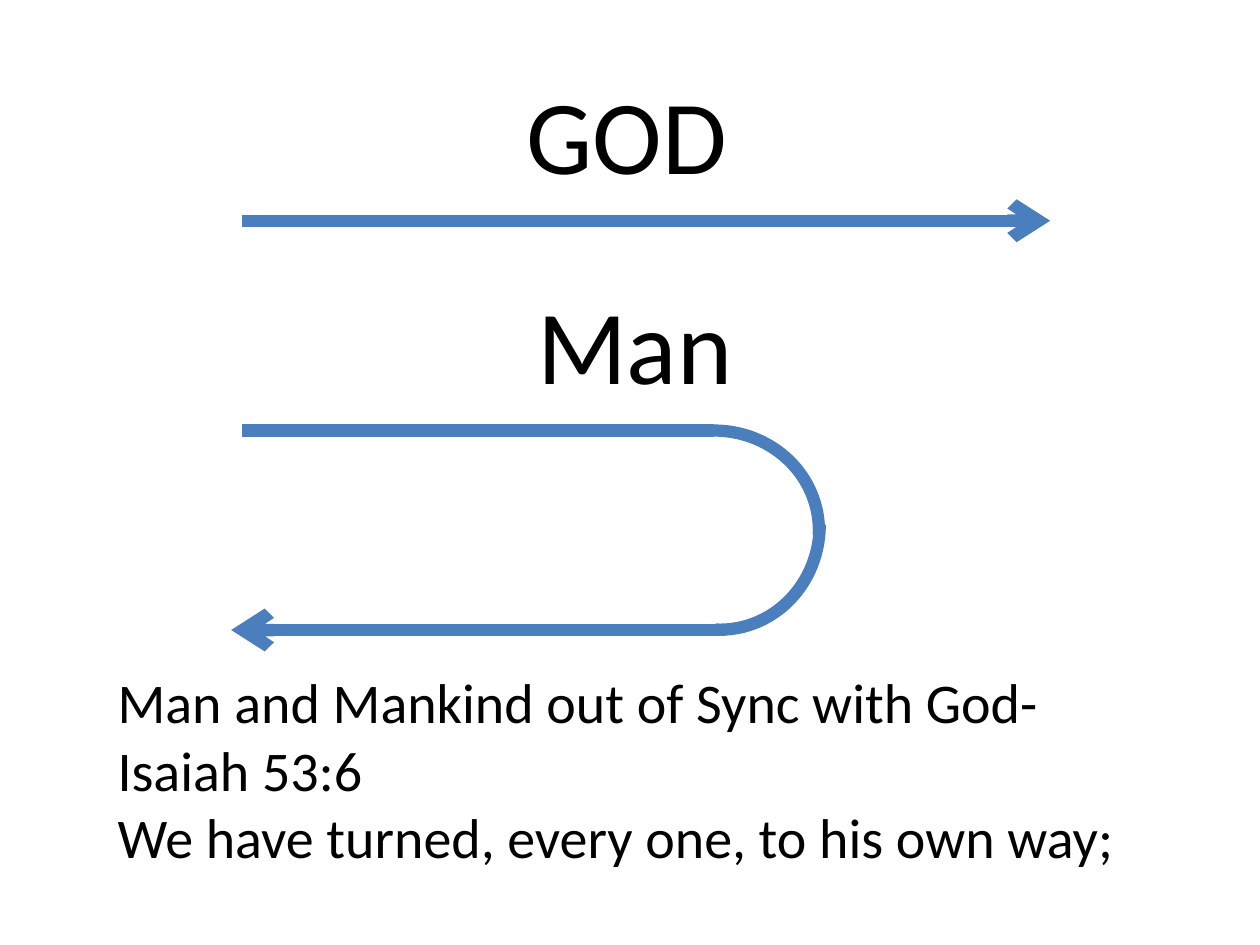
import pptx
import pptx.dml.color
import pptx.enum.shapes
import pptx.enum.text
import pptx.oxml.ns
import pptx.util
from lxml import etree
from pptx.util import Cm


def colour(hex_string):
    return pptx.dml.color.RGBColor.from_string(hex_string)


class SlideBuilder:
    """Holds the style and the current slide."""

    font_name = "Calibri"
    text_colour = "000000"
    line_colour = "4B7EBC"
    line_width = pptx.util.Pt(7)

    def __init__(self, slide):
        self.slide = slide

    def style_line(self, line):
        line.color.rgb = colour(self.line_colour)
        line.width = self.line_width

    def text(self, left, top, width, height, lines, size):
        box = self.slide.shapes.add_textbox(Cm(left), Cm(top), Cm(width), Cm(height))
        frame = box.text_frame
        frame.text = "\n".join(lines)
        frame.word_wrap = False
        frame.auto_size = pptx.enum.text.MSO_AUTO_SIZE.SHAPE_TO_FIT_TEXT
        for paragraph in frame.paragraphs:
            paragraph.font.name = self.font_name
            paragraph.font.size = pptx.util.Pt(size)
            paragraph.font.color.rgb = colour(self.text_colour)

    def horizontal_line(self, shapes, start, end, y, arrow=False):
        connector = shapes.add_connector(
            pptx.enum.shapes.MSO_CONNECTOR.STRAIGHT, Cm(start), Cm(y), Cm(end), Cm(y))
        self.style_line(connector.line)
        properties = connector._element.spPr
        if arrow:
            line = properties.find(pptx.oxml.ns.qn("a:ln"))
            etree.SubElement(line, pptx.oxml.ns.qn("a:tailEnd"), type="arrow")
        etree.SubElement(properties, pptx.oxml.ns.qn("a:effectLst"))

    def quarter_arc(self, shapes, left, top, width, height, rotation=0):
        arc = shapes.add_shape(
            pptx.enum.shapes.MSO_SHAPE.ARC, Cm(left), Cm(top), Cm(width), Cm(height))
        arc.adjustments[0] = 162
        arc.adjustments[1] = 1.407
        arc.rotation = rotation
        arc.shadow.inherit = False
        arc.fill.background()
        self.style_line(arc.line)


def main():
    presentation = pptx.Presentation()
    presentation.slide_width = Cm(25.4)
    presentation.slide_height = Cm(19.05)
    slide = presentation.slides.add_slide(presentation.slide_layouts[6])
    builder = SlideBuilder(slide)
    line_start = 4.87

    # God's straight way
    builder.horizontal_line(slide.shapes, line_start, 21.17, 4.45, arrow=True)
    builder.text(10.37, 1.27, 4.6, 2.82, ["GOD"], 60)

    # Captions for man
    builder.text(10.58, 5.5, 4.5, 2.82, ["Man"], 60)
    builder.text(2.12, 13.34, 20.8, 4.37, [
        "Man and Mankind out of Sync with God-",
        "Isaiah 53:6",
        "We have turned, every one, to his own way;",
    ], 32)

    # Man's way, turning back
    turn = slide.shapes.add_group_shape().shapes
    builder.horizontal_line(turn, 14.61, 4.66, 12.7, arrow=True)
    builder.horizontal_line(turn, line_start, 14.39, 8.68)
    builder.quarter_arc(turn, 12.28, 8.68, 4.23, 4.02)
    builder.quarter_arc(turn, 12.4, 8.57, 4.23, 4.02, rotation=90)

    presentation.save("out.pptx")


if __name__ == "__main__":
    main()
